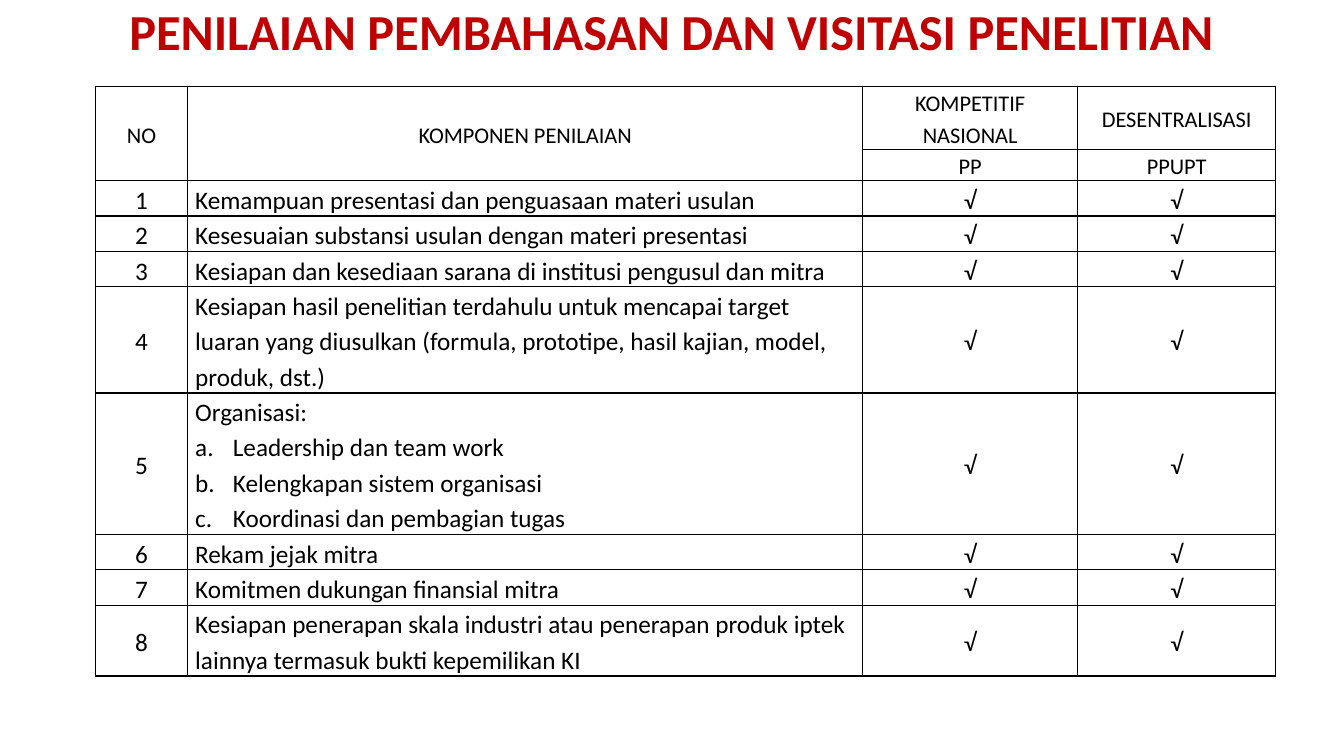
from dataclasses import dataclass
from typing import Any

from lxml.etree import SubElement as Sub
from pptx import Presentation
from pptx.dml.color import RGBColor
from pptx.enum.text import MSO_ANCHOR as Anchor
from pptx.enum.text import MSO_AUTO_SIZE as Fit
from pptx.enum.text import PP_ALIGN as Align
from pptx.oxml.ns import qn
from pptx.util import Cm, Pt

RED = RGBColor(0xC0, 0x00, 0x00)
BLACK = RGBColor(0x00, 0x00, 0x00)
FONT = "Calibri"
TITLE = "PENILAIAN PEMBAHASAN DAN VISITASI PENELITIAN"
WIDTHS = (2.33, 17.01, 5.42, 4.99)
HEADS = (1.58, 0.79)
LINE = 0.89
INDENT = Cm(0.95)
TICK = "√"
CELL = {
    "margin_left": Cm(0.19),
    "margin_right": Cm(0.19),
    "margin_top": 0,
    "margin_bottom": 0,
    "vertical_anchor": Anchor.MIDDLE,
}


@dataclass(frozen=True)
class Head:
    row: int
    col: int
    text: str


@dataclass(frozen=True)
class Item:
    text: str
    lines: int = 1
    points: tuple[str, ...] = ()


HEADINGS = (
    Head(0, 0, "NO"),
    Head(0, 1, "KOMPONEN PENILAIAN"),
    Head(0, 2, "KOMPETITIF NASIONAL"),
    Head(0, 3, "DESENTRALISASI"),
    Head(1, 2, "PP"),
    Head(1, 3, "PPUPT"),
)
ITEMS = (
    Item("Kemampuan presentasi dan penguasaan materi usulan"),
    Item("Kesesuaian substansi usulan dengan materi presentasi"),
    Item("Kesiapan dan kesediaan sarana di institusi pengusul dan mitra"),
    Item("Kesiapan hasil penelitian terdahulu untuk mencapai target luaran "
         "yang diusulkan (formula, prototipe, hasil kajian, model, produk, dst.)", 3),
    Item("Organisasi:", 4, (
        "Leadership dan team work",
        "Kelengkapan sistem organisasi",
        "Koordinasi dan pembagian tugas",
    )),
    Item("Rekam jejak mitra"),
    Item("Komitmen dukungan finansial mitra"),
    Item("Kesiapan penerapan skala industri atau penerapan produk iptek "
         "lainnya termasuk bukti kepemilikan KI", 2),
)


def apply(target: Any, values: dict[str, Any]) -> None:
    for name, value in values.items():
        setattr(target, name, value)


def write(para: Any, text: str, size: int, align: Align, gap: float = 1.15,
          color: RGBColor = BLACK, bold: bool = False) -> None:
    apply(para, {"alignment": align, "line_spacing": gap})
    run = para.add_run()
    run.text = text
    apply(run.font, {"name": FONT, "size": Pt(size), "bold": bold})
    run.font.color.rgb = color


def letter(para: Any) -> None:
    """Number a paragraph a., b., c. with a hanging indent."""
    props = para._p.get_or_add_pPr()
    props.set("marL", str(INDENT))
    props.set("indent", str(-INDENT))
    Sub(props, qn("a:buFont"), typeface="+mj-lt")
    Sub(props, qn("a:buAutoNum"), type="alphaLcPeriod")


def frame(cell: Any) -> None:
    """Give a cell its margins, black borders and no fill."""
    apply(cell, CELL)
    props = cell._tc.get_or_add_tcPr()
    for side in ("lnL", "lnR", "lnT", "lnB"):
        line = Sub(props, qn(f"a:{side}"), w=str(Pt(1)))
        fill = Sub(line, qn("a:solidFill"))
        Sub(fill, qn("a:srgbClr"), val=str(BLACK))
    cell.fill.background()


def add_title(slide: Any, width: int) -> None:
    title = slide.shapes.title
    apply(title, {"left": 0, "top": Cm(0.05), "width": width, "height": Cm(0.89)})
    text = title.text_frame
    apply(text, {"word_wrap": True, "auto_size": Fit.NONE,
                 "vertical_anchor": Anchor.TOP})
    write(text.paragraphs[0], TITLE, 36, Align.CENTER, 0.9, RED, True)


def add_grid(slide: Any) -> None:
    heights = HEADS + tuple(LINE * item.lines for item in ITEMS)
    table = slide.shapes.add_table(
        len(heights), len(WIDTHS), Cm(2.4), Cm(2.17),
        Cm(sum(WIDTHS)), Cm(sum(heights))).table
    apply(table, {"first_row": False, "horz_banding": False})
    for col, width in zip(table.columns, WIDTHS):
        col.width = Cm(width)
    for row, height in zip(table.rows, heights):
        row.height = Cm(height)
    for cell in table.iter_cells():
        frame(cell)
    for col in (0, 1):
        table.cell(0, col).merge(table.cell(1, col))
    for head in HEADINGS:
        para = table.cell(head.row, head.col).text_frame.paragraphs[0]
        write(para, head.text, 16, Align.CENTER)
    for num, item in enumerate(ITEMS, 1):
        row = num + len(HEADS) - 1
        for col, text in enumerate((str(num), item.text, TICK, TICK)):
            align = Align.LEFT if col == 1 else Align.CENTER
            write(table.cell(row, col).text_frame.paragraphs[0], text, 18, align)
        for point in item.points:
            para = table.cell(row, 1).text_frame.add_paragraph()
            write(para, point, 18, Align.LEFT)
            letter(para)


def main() -> None:
    deck = Presentation()
    apply(deck, {"slide_width": Cm(33.87), "slide_height": Cm(19.05)})
    slide = deck.slides.add_slide(deck.slide_layouts[5])
    add_title(slide, deck.slide_width)
    add_grid(slide)
    deck.save("out.pptx")


if __name__ == "__main__":
    main()
